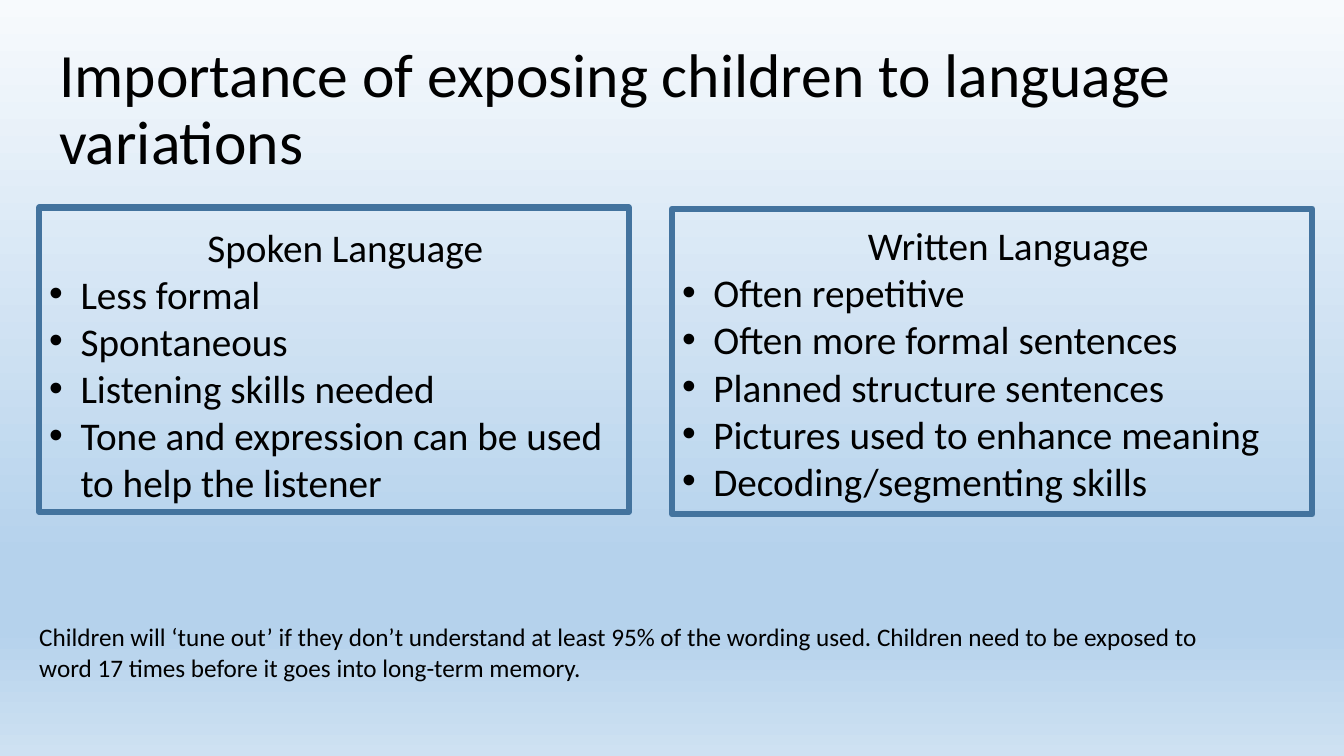
from dataclasses import dataclass

import lxml.etree
import pptx
import pptx.dml.color
import pptx.enum.shapes
import pptx.enum.text
import pptx.oxml.ns
import pptx.util

Cm = pptx.util.Cm
Pt = pptx.util.Pt
Align = pptx.enum.text.PP_ALIGN
Anchor = pptx.enum.text.MSO_ANCHOR
qn = pptx.oxml.ns.qn


@dataclass(frozen=True)
class Theme:
    font: str = "Calibri"
    ink: str = "000000"
    border: str = "43739E"
    sky: tuple = ((0, "F7FAFD"), (74, "B5D2EC"), (83, "B5D2EC"), (100, "CEE1F2"))
    title_size: int = 44
    list_size: int = 28
    note_size: int = 18
    border_width: float = 4.5
    bullet_indent: float = 0.79


THEME = Theme()


def rgb(value):
    return pptx.dml.color.RGBColor.from_string(value)


def paint_background(page):
    fill = page.background.fill
    fill.gradient()
    fill.gradient_angle = 270
    stops = page.element.find(".//" + qn("a:gsLst"))
    for stop in list(stops):
        stops.remove(stop)
    for percent, color in THEME.sky:
        stop = lxml.etree.SubElement(stops, qn("a:gs"), pos=str(percent * 1000))
        lxml.etree.SubElement(stop, qn("a:srgbClr"), val=color)


def add_bullet(para):
    properties = para._p.get_or_add_pPr()
    indent = Cm(THEME.bullet_indent)
    properties.set("marL", str(indent))
    properties.set("indent", str(-indent))
    lxml.etree.SubElement(properties, qn("a:buFont"), typeface="Arial")
    lxml.etree.SubElement(properties, qn("a:buChar"), char="•")


def write_text(para, text, *, size, align=Align.LEFT, spacing=None, bullet=False):
    para.alignment = align
    para.line_spacing = spacing
    if bullet:
        add_bullet(para)
    span = para.add_run()
    span.text = text
    span.font.name = THEME.font
    span.font.size = Pt(size)
    span.font.color.rgb = rgb(THEME.ink)


def add_text_box(page, area, anchor=Anchor.TOP, grow=True):
    box = page.shapes.add_textbox(*map(Cm, area))
    frame = box.text_frame
    frame.word_wrap = True
    frame.vertical_anchor = anchor
    if grow:
        frame.auto_size = pptx.enum.text.MSO_AUTO_SIZE.SHAPE_TO_FIT_TEXT
    return frame


def add_list(page, area, heading, items):
    frame = add_text_box(page, area)
    write_text(frame.paragraphs[0], heading, size=THEME.list_size, align=Align.CENTER)
    for item in items:
        write_text(frame.add_paragraph(), item, size=THEME.list_size, bullet=True)


def add_border(page, area):
    border = page.shapes.add_shape(
        pptx.enum.shapes.MSO_SHAPE.RECTANGLE, *map(Cm, area)
    )
    border.shadow.inherit = False
    border.fill.background()
    border.line.color.rgb = rgb(THEME.border)
    border.line.width = Pt(THEME.border_width)


def main():
    deck = pptx.Presentation()
    deck.slide_width = Cm(33.87)
    deck.slide_height = Cm(19.05)
    page = deck.slides.add_slide(deck.slide_layouts[6])
    paint_background(page)

    title = add_text_box(page, (1.24, 0.64, 32.41, 4.32), Anchor.MIDDLE, grow=False)
    write_text(
        title.paragraphs[0],
        "Importance of exposing children to language variations",
        size=THEME.title_size,
        spacing=0.9,
    )

    add_list(page, (0.99, 5.49, 15.42, 7.44), "Spoken Language", (
        "Less formal",
        "Spontaneous",
        "Listening skills needed",
        "Tone and expression can be used to help the listener",
    ))
    add_list(page, (16.94, 5.46, 16.94, 7.44), "Written Language", (
        "Often repetitive",
        "Often more formal sentences",
        "Planned structure sentences",
        "Pictures used to enhance meaning",
        "Decoding/segmenting skills",
    ))
    add_border(page, (0.99, 5.23, 14.86, 7.67))
    add_border(page, (16.94, 5.26, 16.13, 7.7))

    note = add_text_box(page, (0.74, 15.54, 30.84, 1.8))
    write_text(
        note.paragraphs[0],
        "Children will ‘tune out’ if they don’t understand at least 95% of the wording "
        "used. Children need to be exposed to word 17 times before it goes into "
        "long-term memory.",
        size=THEME.note_size,
    )
    deck.save("out.pptx")


if __name__ == "__main__":
    main()
